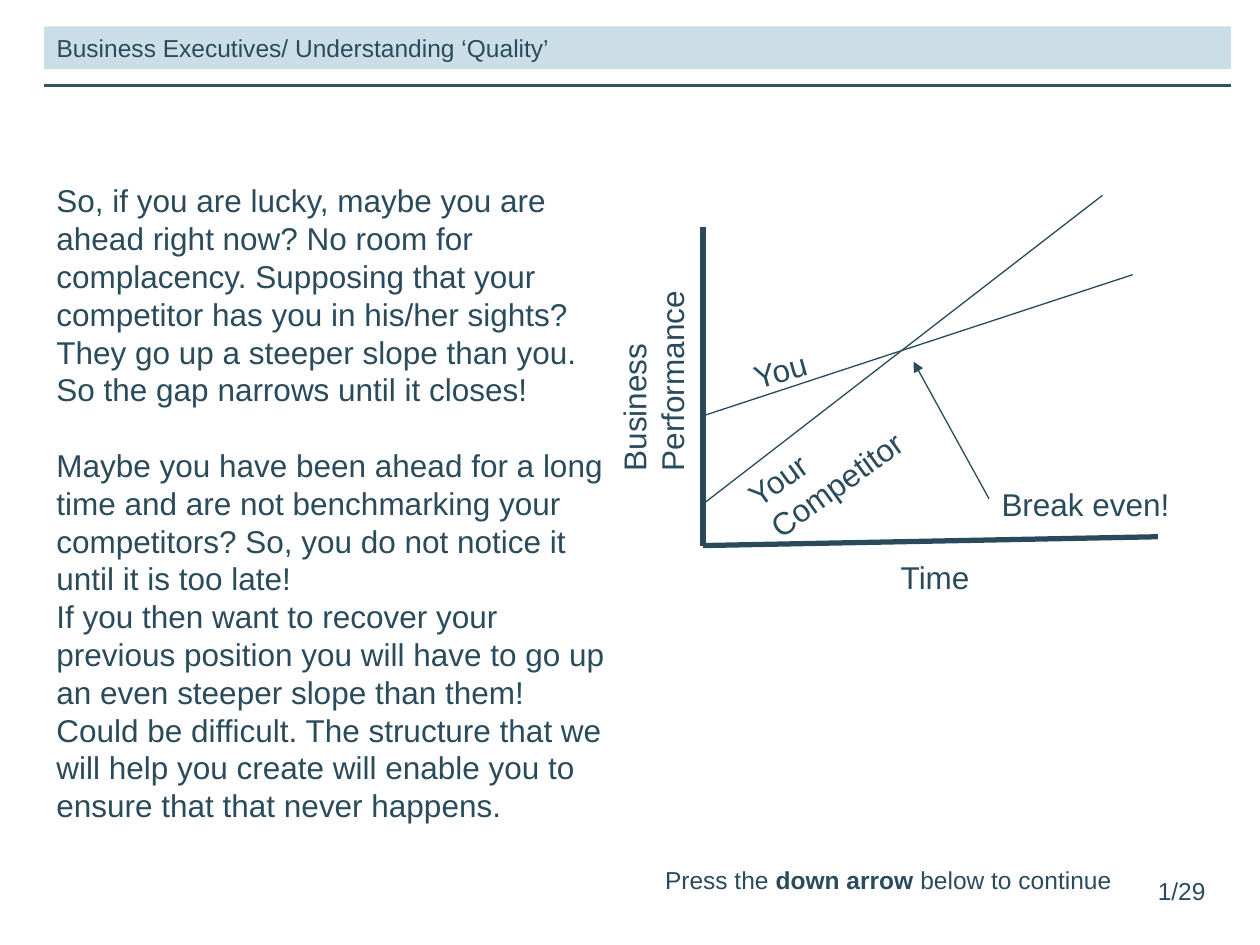
from dataclasses import dataclass

from lxml.etree import SubElement
from pptx import Presentation
from pptx.dml.color import RGBColor
from pptx.enum.shapes import MSO_CONNECTOR as Connector, MSO_SHAPE as Shape
from pptx.enum.text import MSO_ANCHOR as Anchor, MSO_AUTO_SIZE as AutoSize, PP_ALIGN as Align
from pptx.oxml.ns import qn
from pptx.util import Inches, Pt

COLORS = {"text": "2A4B5B", "chart": "284A5A", "rule": "31535E", "banner": "CBDEE7"}
FONT = "Arial"
SMALL, LARGE = 14, 18
ORIGIN = (5.58, 4.33)


@dataclass
class Label:
    text: str
    left: float
    top: float
    width: float
    height: float = 0.32
    rotation: float = 0


@dataclass
class Line:
    start: tuple[float, float]
    end: tuple[float, float]
    weight: float = 0.75
    color: str = "chart"


def rgb(name: str) -> RGBColor:
    return RGBColor.from_string(COLORS[name])


def style_paragraph(para, size: float) -> None:
    para.alignment = Align.LEFT
    para.font.name = FONT
    para.font.size = Pt(size)
    para.font.color.rgb = rgb("text")


def add_label(slide, label: Label, size: float = LARGE, wrap: bool = True):
    box = slide.shapes.add_textbox(
        Inches(label.left), Inches(label.top), Inches(label.width), Inches(label.height))
    box.rotation = label.rotation
    frame = box.text_frame
    frame.word_wrap = wrap
    frame.auto_size = AutoSize.SHAPE_TO_FIT_TEXT
    frame.text = label.text
    for para in frame.paragraphs:
        style_paragraph(para, size)
    return box


def add_line(slide, line: Line):
    connector = slide.shapes.add_connector(
        Connector.STRAIGHT, *(Inches(value) for value in (*line.start, *line.end)))
    connector.line.color.rgb = rgb(line.color)
    connector.line.width = Pt(line.weight)
    SubElement(connector.element.spPr, qn("a:effectLst"))
    return connector


def add_banner(slide, text: str) -> None:
    banner = slide.shapes.add_shape(
        Shape.RECTANGLE, Inches(0.35), Inches(0.21), Inches(9.42), Inches(0.34))
    banner.shadow.inherit = False
    banner.fill.solid()
    banner.fill.fore_color.rgb = rgb("banner")
    banner.line.fill.background()
    banner.text_frame.word_wrap = True
    banner.text_frame.vertical_anchor = Anchor.TOP
    banner.text_frame.text = text
    style_paragraph(banner.text_frame.paragraphs[0], SMALL)


def add_prompt(slide) -> None:
    box = add_label(slide, Label("", 5.18, 6.82, 3.76, 0.34), SMALL, wrap=False)
    para = box.text_frame.paragraphs[0]
    for text, bold in (("Press the ", False), ("down arrow", True),
                       (" below to continue", False)):
        span = para.add_run()
        span.text = text
        span.font.bold = bold


def add_performance_chart(slide) -> None:
    # Axes, then the two performance lines
    for line in (
        Line((ORIGIN[0], 1.8), ORIGIN, 3),
        Line(ORIGIN, (9.19, 4.26), 3),
        Line((ORIGIN[0], 3.3), (8.99, 2.18)),
        Line((ORIGIN[0], 4), (8.75, 1.55)),
    ):
        add_line(slide, line)

    # Labels of the lines and axes
    for label in (
        Label("You", 5.86, 2.66, 1.18, rotation=344),
        Label("Your Competitor", 5.71, 3.35, 1.61, rotation=324.2),
        Label("Business Performance", 4.26, 2.56, 1.85, 0.71, rotation=270),
        Label("Time", 7.05, 4.38, 1.22),
    ):
        add_label(slide, label)

    # Callout with an arrow to the crossing
    callout = add_label(slide, Label("Break even!", 7.85, 3.8, 1.55))
    arrow = add_line(slide, Line((7.84, 3.99), (7.25, 2.87)))
    arrow.begin_connect(callout, 1)
    SubElement(arrow.line._get_or_add_ln(), qn("a:tailEnd"), type="triangle")


def add_body(slide) -> None:
    paragraphs = (
        "So, if you are lucky, maybe you are ahead right now? No room for complacency. "
        "Supposing that your competitor has you in his/her sights?",
        "They go up a steeper slope than you. So the gap narrows until it closes!",
        "Maybe you have been ahead for a long time and are not benchmarking your "
        "competitors? So, you do not notice it until it is too late!",
        "If you then want to recover your previous position you will have to go up an "
        "even steeper slope than them! Could be difficult. The structure that we will "
        "help you create will enable you to ensure that that never happens.",
    )
    box = add_label(slide, Label("\n".join(paragraphs), 0.35, 1.39, 4.57, 5.25))
    box.text_frame.paragraphs[2].space_before = Pt(21.6)


def main() -> None:
    deck = Presentation()
    deck.slide_width, deck.slide_height = Inches(10), Inches(7.5)
    slide = deck.slides.add_slide(deck.slide_layouts[6])

    # Header and footer
    add_line(slide, Line((9.77, 0.68), (0.35, 0.68), 1.5, "rule"))
    add_label(slide, Label("1/29", 9.09, 6.9, 0.75, 0.34), SMALL)
    add_prompt(slide)
    add_banner(slide, "Business Executives/ Understanding ‘Quality’")

    # Content
    add_performance_chart(slide)
    add_body(slide)
    deck.save("out.pptx")


if __name__ == "__main__":
    main()
